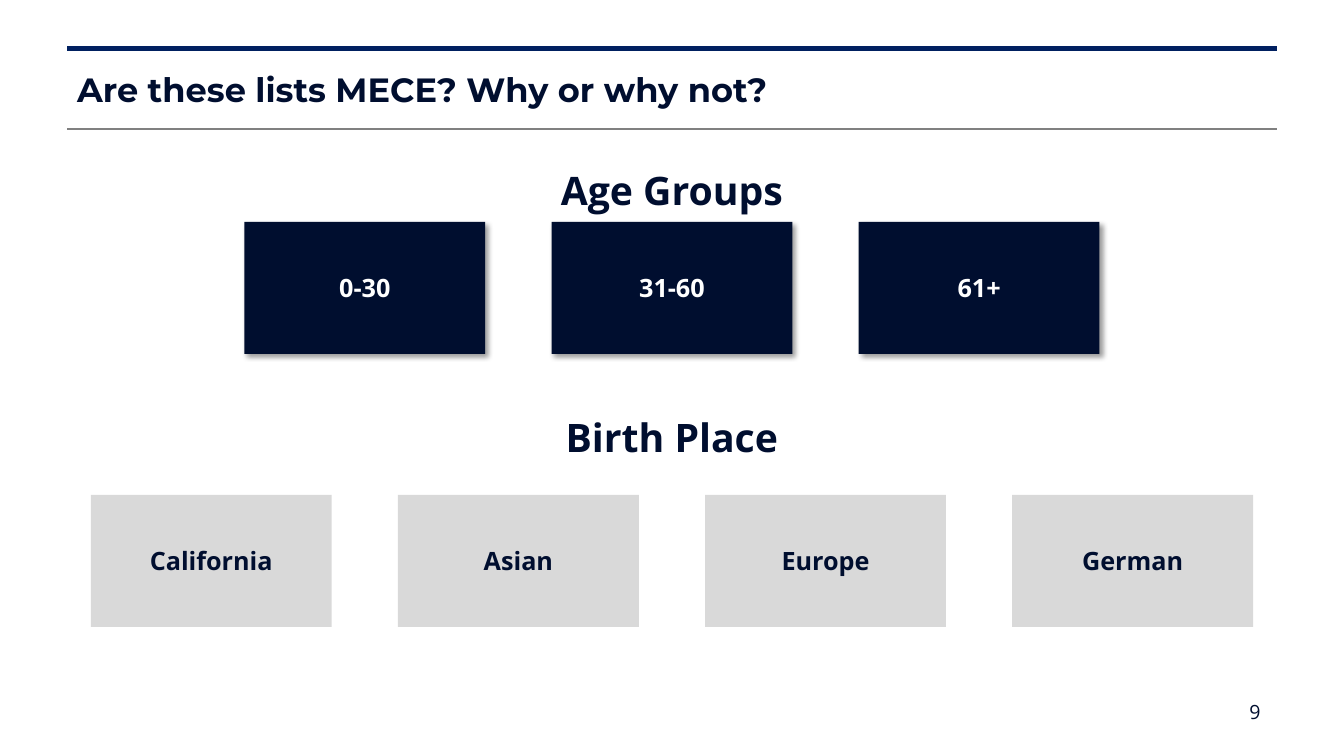
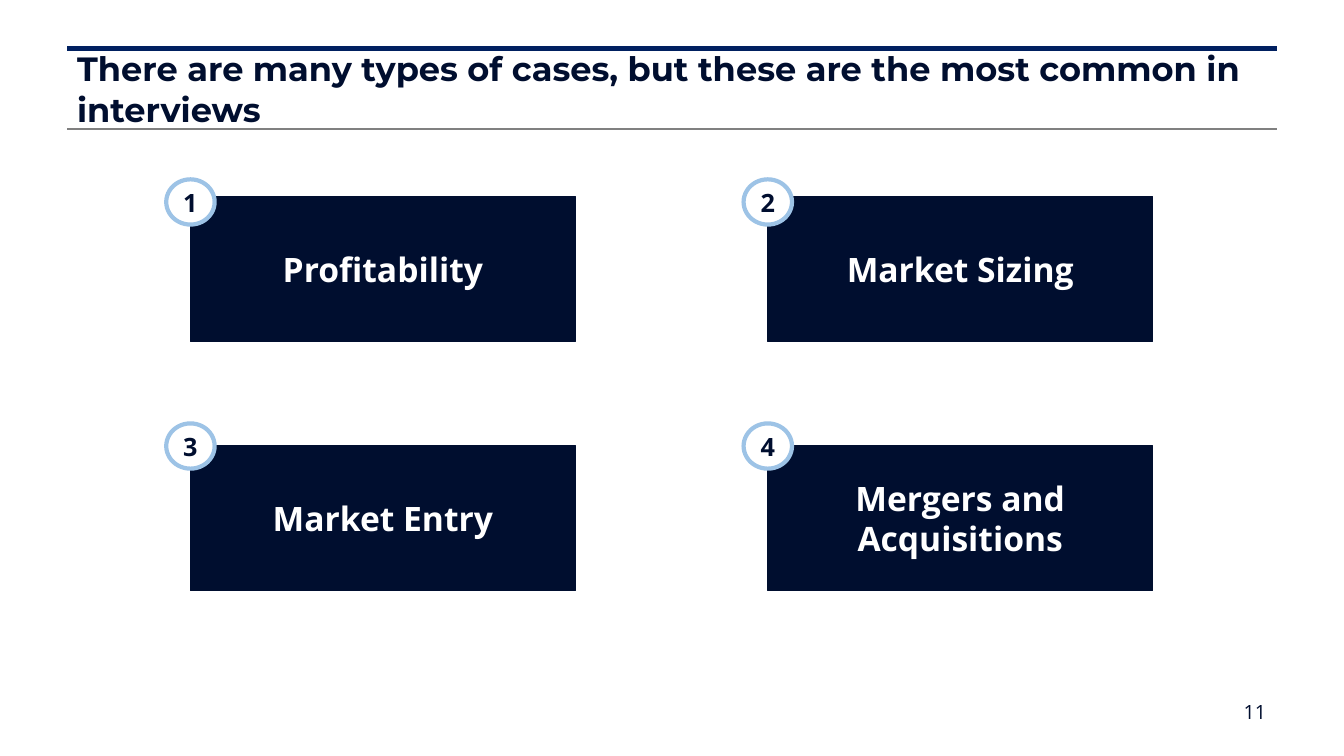
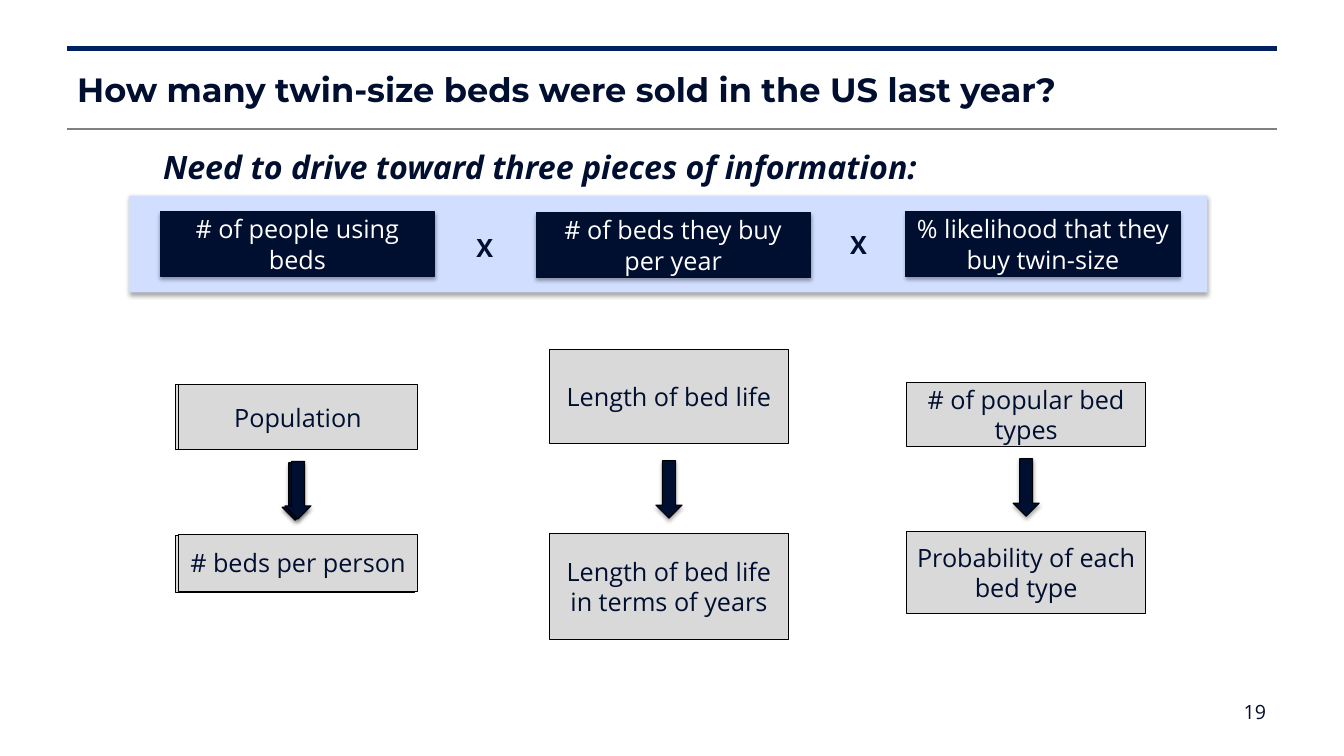
from dataclasses import dataclass

from lxml import etree
from pptx import Presentation
from pptx.dml.color import RGBColor
from pptx.enum.shapes import MSO_CONNECTOR, MSO_SHAPE
from pptx.enum.text import MSO_ANCHOR, MSO_AUTO_SIZE, PP_ALIGN
from pptx.oxml.ns import qn
from pptx.util import Cm, Pt

RECT = MSO_SHAPE.RECTANGLE
OVAL = MSO_SHAPE.OVAL
ARROW = MSO_SHAPE.DOWN_ARROW
LINE = MSO_CONNECTOR.STRAIGHT
LEFT = PP_ALIGN.LEFT
CENTER = PP_ALIGN.CENTER
TOP = MSO_ANCHOR.TOP
MIDDLE = MSO_ANCHOR.MIDDLE
FIXED = MSO_AUTO_SIZE.NONE


@dataclass(frozen=True)
class Theme:
    wide: float = 33.87
    high: float = 19.05
    head: str = "Montserrat"
    body: str = "Open Sans"
    navy: str = "000E2F"
    band: str = "002060"
    rule: str = "808080"
    gray: str = "D9D9D9"
    pale: str = "D1DEFF"
    ring: str = "9DC3E6"
    white: str = "FFFFFF"
    black: str = "000000"
    title: int = 24
    group: int = 28
    lead: int = 23
    label: int = 18
    large: int = 24
    page: int = 14
    thin: float = 0.75
    slant: tuple = (40, 4, 3, 45)
    drop: tuple = (35, 3.1, 1.8, 90)


T = Theme()


def color(code):
    return RGBColor.from_string(code)


def write(shape, text, size, ink, bold=False, italic=False, align=CENTER,
          anchor=MIDDLE, font=T.body):
    frame = shape.text_frame
    frame.text = text
    frame.word_wrap = True
    frame.auto_size = FIXED
    frame.vertical_anchor = anchor
    para = frame.paragraphs[0]
    para.alignment = align
    for run in para.runs:
        run.font.name = font
        run.font.size = Pt(size)
        run.font.bold = bold
        run.font.italic = italic
        run.font.color.rgb = color(ink)


def shade(shape, look):
    alpha, blur, dist, angle = look
    effect = shape.element.spPr.find(qn("a:effectLst"))
    outer = etree.SubElement(
        effect, qn("a:outerShdw"), blurRad=str(Pt(blur)), dist=str(Pt(dist)),
        dir=str(angle * 60000), algn="ctr", rotWithShape="0")
    tint = etree.SubElement(outer, qn("a:srgbClr"), val=T.black)
    etree.SubElement(tint, qn("a:alpha"), val=str(alpha * 1000))


def block(slide, kind, area, fill, edge=None, width=T.thin, look=None):
    shape = slide.shapes.add_shape(kind, *map(Cm, area))
    shape.shadow.inherit = False
    shape.fill.solid()
    shape.fill.fore_color.rgb = color(fill)
    if edge:
        shape.line.color.rgb = color(edge)
        shape.line.width = Pt(width)
    else:
        shape.line.fill.background()
    if look:
        shade(shape, look)
    return shape


def label(slide, area, text, size, **style):
    box = slide.shapes.add_textbox(*map(Cm, area))
    write(box, text, size, T.navy, **style)


def stroke(slide, top, ink, width):
    line = slide.shapes.add_connector(
        LINE, Cm(1.69), Cm(top), Cm(32.17), Cm(top))
    line.line.color.rgb = color(ink)
    line.line.width = Pt(width)
    etree.SubElement(line.element.spPr, qn("a:effectLst"))


def start(deck, text, page):
    slide = deck.slides.add_slide(deck.slide_layouts[5])
    stroke(slide, 1.22, T.band, 3.5)
    stroke(slide, 3.25, T.rule, 1.5)
    label(slide, (30.43, 17.42, 2.39, 1.02), page, T.page)
    title = slide.shapes.title
    title.left, title.top, title.width, title.height = map(
        Cm, (1.69, 1.22, 30.48, 2.03))
    write(title, text, T.title, T.navy, bold=True, align=LEFT, font=T.head)
    return slide


def cards(slide, names, top, fill, ink, look=None):
    width, pitch = 6.07, 7.74
    left = (T.wide - width - pitch * (len(names) - 1)) / 2
    for i, name in enumerate(names):
        card = block(slide, RECT, (left + i * pitch, top, width, 3.33),
                     fill, look=look)
        write(card, name, T.label, ink, bold=True)


def lists(deck):
    slide = start(deck, "Are these lists MECE? Why or why not?", "9")
    for text, top in (("Age Groups", 4.06), ("Birth Place", 10.29)):
        label(slide, (9.6, top, 14.66, 1.55), text, T.group,
              bold=True, anchor=TOP)
    cards(slide, ("0-30", "31-60", "61+"), 5.59, T.navy, T.white, T.slant)
    cards(slide, ("California", "Asian", "Europe", "German"), 12.47,
          T.gray, T.navy)


def cases(deck):
    slide = start(deck, "There are many types of cases, but these are "
                  "the most common in interviews", "11")
    names = ("Profitability", "Market Sizing", "Market Entry",
             "Mergers and Acquisitions")
    for i, name in enumerate(names):
        row, col = divmod(i, 2)
        left = 4.8 + col * 14.55
        box = block(slide, RECT, (left, 4.95 + row * 6.28, 9.7, 3.66),
                    T.navy, T.navy)
        write(box, name, T.large, T.white, bold=True)
        badge = block(slide, OVAL,
                      (left - 0.61, 4.52 + row * 6.15, 1.22, 1.14),
                      T.white, T.ring, 3)
        write(badge, str(i + 1), T.label, T.navy, bold=True)


def step(slide, area, text):
    box = block(slide, RECT, area, T.gray, T.black)
    write(box, text, T.label, T.navy)


def chain(slide, left, first, mid, last):
    width, stem = 6.02, 0.66
    name, top, high = first
    step(slide, (left, top, width, high), name)
    block(slide, ARROW, (left + (width - stem) / 2, mid, stem, 1.45),
          T.navy, T.black, look=T.drop)
    name, high = last
    step(slide, (left, mid + 1.83, width, high), name)


def beds(deck):
    slide = start(
        deck, "How many twin-size beds were sold in the US last year?", "19")
    block(slide, RECT, (3.25, 4.93, 27.18, 2.44), T.pale, look=T.drop)
    label(slide, (3.86, 3.58, 19.86, 1.14),
          "Need to drive toward three pieces of information:", T.lead,
          bold=True, italic=True, align=LEFT, anchor=TOP)
    drivers = (
        (4.04, 5.33, "# of people using beds"),
        (13.51, 5.36, "# of beds they buy per year"),
        (22.83, 5.33, "% likelihood that they buy twin-size"),
    )
    for left, top, text in drivers:
        box = block(slide, RECT, (left, top, 6.91, 1.63), T.navy, T.navy,
                    look=T.drop)
        write(box, text, T.label, T.white)
    for left, top in ((11.15, 5.72), (20.57, 5.66)):
        label(slide, (left, top, 2.13, 0.94), "X", T.label,
              bold=True, anchor=TOP)
    people = ("Population", 9.7, 1.63)
    share = ("# beds per person", 1.45)
    chains = (
        (4.43, people, 11.66, share),
        (4.5, people, 11.63, share),
        (13.85, ("Length of bed life", 8.81, 2.36), 11.61,
         ("Length of bed life in terms of years", 2.67)),
        (22.85, ("# of popular bed types", 9.63, 1.63), 11.56,
         ("Probability of each bed type", 2.08)),
    )
    for parts in chains:
        chain(slide, *parts)


def main():
    deck = Presentation()
    deck.slide_width = Cm(T.wide)
    deck.slide_height = Cm(T.high)
    lists(deck)
    cases(deck)
    beds(deck)
    deck.save("out.pptx")


if __name__ == "__main__":
    main()
